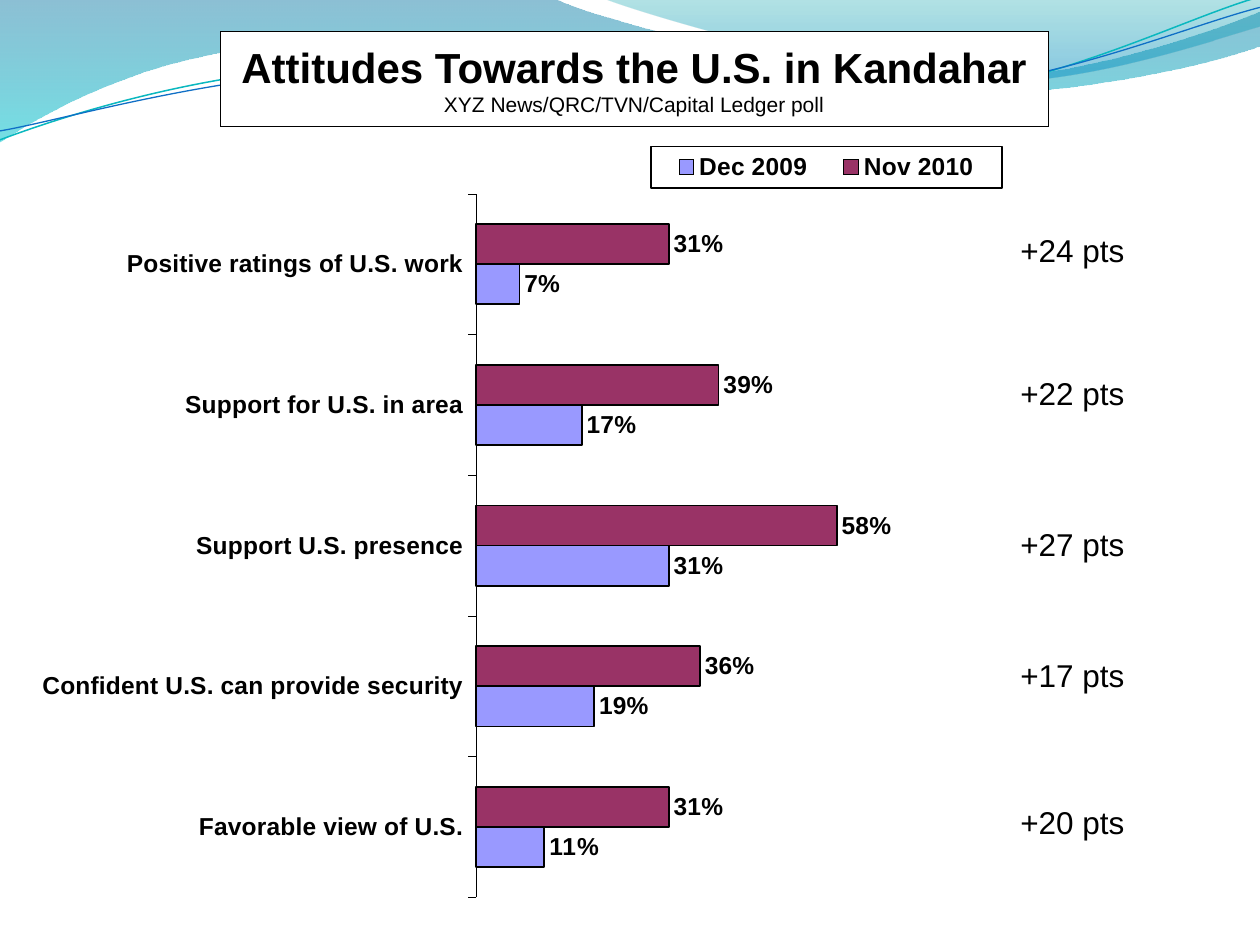
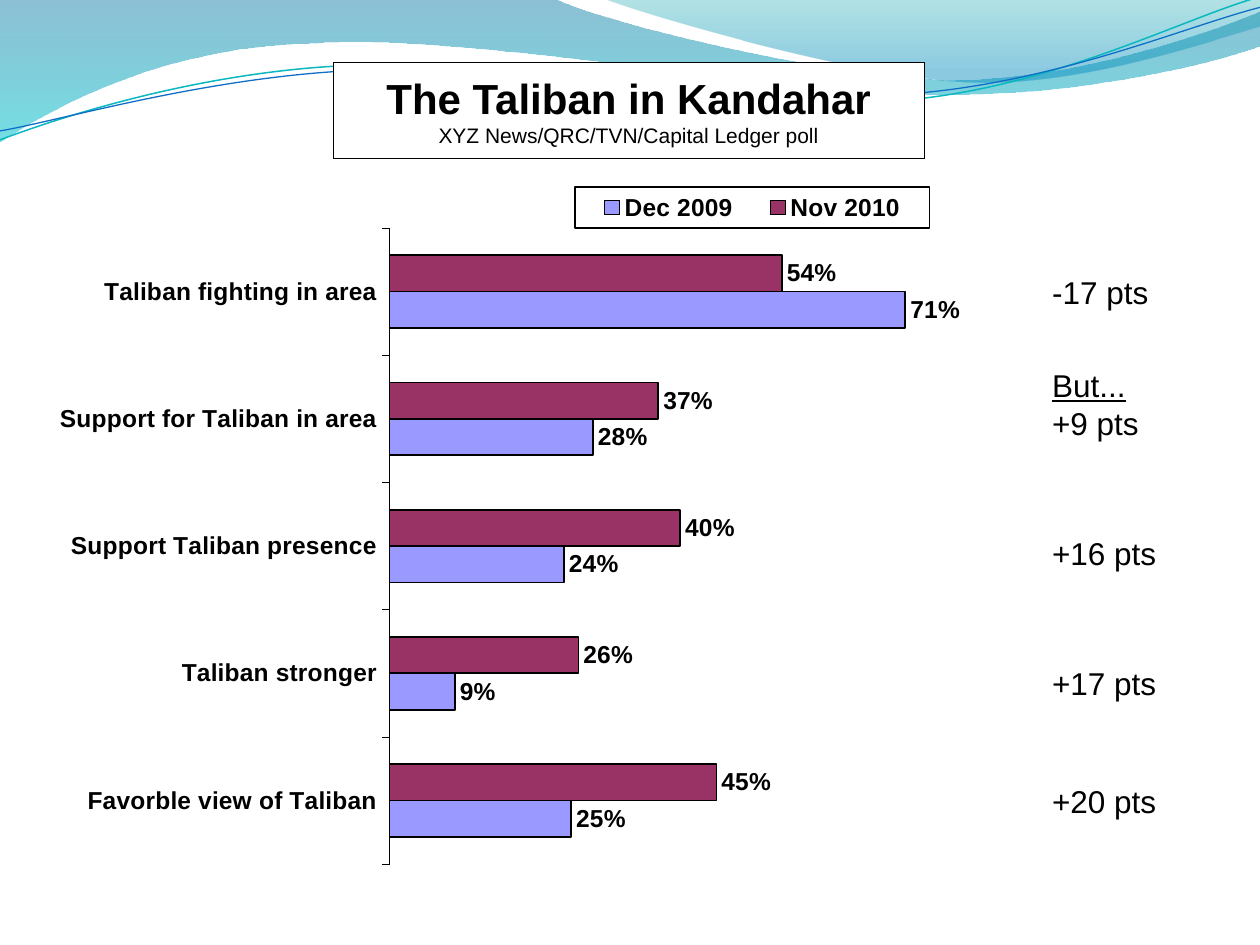
from lxml.etree import SubElement as Sub
from pptx import Presentation as Deck
from pptx.chart.data import CategoryChartData as Data
from pptx.dml.color import RGBColor as Color
from pptx.enum.chart import XL_CHART_TYPE as Kind
from pptx.enum.chart import XL_LABEL_POSITION as Spot
from pptx.enum.chart import XL_LEGEND_POSITION as Side
from pptx.enum.chart import XL_TICK_MARK as Tick
from pptx.enum.text import MSO_ANCHOR as Anchor
from pptx.enum.text import MSO_AUTO_SIZE as Fit
from pptx.enum.text import PP_ALIGN as Align
from pptx.oxml import parse_xml
from pptx.oxml.ns import nsdecls, qn
from pptx.util import Cm, Pt

BLACK = Color(0, 0, 0)
WHITE = Color(255, 255, 255)
PLUM = Color(0x99, 0x33, 0x66)
LILAC = Color(0x99, 0x99, 0xFF)
SEA = Color(0x00, 0x74, 0xA1)
AQUA = Color(0x00, 0xC6, 0xCF)
TEAL = Color(0x00, 0xA1, 0xA9)
SKY = Color(0x00, 0x8B, 0xBF)
GREEN = Color(0x0A, 0xB8, 0xBF)
BLUE = Color(0x0F, 0x6F, 0xC6)
FONT = "Arial"
POLL = "XYZ News/QRC/TVN/Capital Ledger poll"

BAND = [(0, 0), (11.18, -0.03), (12.09, 0.43, 16.87, 1.6, 19.25, 1.6),
        (21.67, 1.6, 24.33, 0.66, 25.4, 0.23), (25.43, 0.91),
        (24.97, 1.12, 22.1, 1.93, 18.95, 1.9),
        (15.8, 1.9, 9.7, 0.71, 6.53, 0.86),
        (3.28, 0.91, 1.17, 2.11, -0.03, 2.87)]
CREST = [(12.17, -0.03), (12.93, 0.28, 17.32, 1.57, 19.53, 1.65),
         (21.74, 1.75, 24.41, 0.81, 25.4, 0.53), (25.4, 0)]
UPPER = [(0, 2.82), (1.22, 2.36, 4.01, 1.45, 7.04, 1.32),
         (10.03, 1.19, 15.06, 2.26, 18.11, 2.03),
         (21.16, 1.8, 23.83, 0.38, 25.35, -0.05)]
LOWER = [(0, 2.64), (1.19, 2.44, 4.17, 1.55, 7.19, 1.42),
         (10.24, 1.3, 15.16, 2.13, 18.21, 1.9),
         (21.23, 1.7, 23.9, 0.53, 25.4, 0.15)]


def style(font, size, bold=False):
    font.name, font.size, font.bold = FONT, Pt(size), bold
    font.color.rgb = BLACK


def put(para, text, size=18, bold=False, under=False, gap=0, align=Align.LEFT):
    run = para.add_run()
    run.text = text
    style(run.font, size, bold)
    run.font.underline = under
    para.alignment = align
    para.space_before = Pt(gap)


def bend(shape, steps):
    lines = iter(list(shape.element.iter(qn("a:lnTo"))))
    for step in steps[1:]:
        group = [next(lines) for _ in step[::2]]
        if len(group) == 3:
            curve = parse_xml(f"<a:cubicBezTo {nsdecls('a')}/>")
            group[0].addprevious(curve)
            for line in group:
                curve.append(line[0])
                line.getparent().remove(line)


def place(node, index, box, inner=False):
    for old in node.findall(qn("c:layout")):
        node.remove(old)
    layout = parse_xml(f"<c:layout {nsdecls('c')}/>")
    manual = Sub(layout, qn("c:manualLayout"))
    if inner:
        Sub(manual, qn("c:layoutTarget")).set("val", "inner")
    for tag in ("xMode", "yMode"):
        Sub(manual, qn("c:" + tag)).set("val", "edge")
    for tag, value in zip("xywh", box):
        Sub(manual, qn("c:" + tag)).set("val", str(value))
    node.insert(index, layout)


def frame(node, inside):
    props = parse_xml(f"<c:spPr {nsdecls('c', 'a')}>{inside}</c:spPr>")
    node.find(qn("c:txPr")).addprevious(props)


class Page:
    def __init__(self, deck):
        self.deck = deck
        self.slide = None

    def start(self):
        self.slide = self.deck.slides.add_slide(self.deck.slide_layouts[5])

    def shape(self, steps, close):
        points = [(Cm(x), Cm(y)) for step in steps
                  for x, y in zip(step[::2], step[1::2])]
        build = self.slide.shapes.build_freeform(*points[0])
        build.add_line_segments(points[1:], close=close)
        shape = build.convert_to_shape()
        bend(shape, steps)
        shape.shadow.inherit = False
        tree = self.deck.slide_master.element.cSld.spTree
        shape.element.nvSpPr.cNvPr.id = 100 + len(tree)
        tree.append(shape.element)
        return shape

    def wave(self, steps, *stops):
        shape = self.shape(steps, True)
        shape.line.fill.background()
        shape.fill.gradient()
        shape.fill.gradient_angle = 270
        for stop, (color, spot, _) in zip(shape.fill.gradient_stops, stops):
            stop.color.rgb, stop.position = color, spot
        tints = shape.element.spPr.iter(qn("a:srgbClr"))
        for tint, (_, _, alpha) in zip(tints, stops):
            Sub(tint, qn("a:alpha")).set("val", str(alpha * 1000))

    def curve(self, steps, color, width):
        shape = self.shape(steps, False)
        shape.fill.background()
        shape.line.color.rgb, shape.line.width = color, Pt(width)

    def title(self, text, left, top, width):
        box = self.slide.shapes.title
        box.left, box.top, box.width, box.height = map(Cm, (left, top, width, 1.93))
        box.fill.solid()
        box.fill.fore_color.rgb = WHITE
        box.line.color.rgb, box.line.width = BLACK, Pt(0)
        body = box.text_frame
        body.auto_size, body.vertical_anchor = Fit.NONE, Anchor.MIDDLE
        body.margin_left = body.margin_right = Cm(0.15)
        body.margin_top = body.margin_bottom = Cm(0.1)
        put(body.paragraphs[0], text, size=24, bold=True, align=Align.CENTER)
        put(body.add_paragraph(), POLL, size=12, align=Align.CENTER)

    def notes(self, left, top, rows):
        box = self.slide.shapes.add_textbox(*map(Cm, (left, top, 3.3, 11.76)))
        body = box.text_frame
        body.word_wrap = True
        for i, (text, gap) in enumerate(rows):
            para = body.add_paragraph() if i else body.paragraphs[0]
            put(para, text, gap=gap, under=text == "But...")

    def chart(self, box, names, now, then, inner, key):
        data = Data(number_format="0%")
        data.categories = names
        data.add_series("Nov 2010", [n / 100 for n in now])
        data.add_series("Dec 2009", [n / 100 for n in then])
        chart = self.slide.shapes.add_chart(
            Kind.BAR_CLUSTERED, *map(Cm, box), data).chart
        chart.has_title = False
        style(chart.font, 10)
        frame(chart.element, "<a:noFill/><a:ln><a:noFill/></a:ln>")

        axis = chart.category_axis
        axis.reverse_order = True
        axis.major_tick_mark, axis.minor_tick_mark = Tick.OUTSIDE, Tick.NONE
        axis.has_major_gridlines = False
        axis.format.line.color.rgb, axis.format.line.width = BLACK, Pt(0.25)
        style(axis.tick_labels.font, 14, True)
        scale = chart.value_axis
        scale.minimum_scale, scale.maximum_scale, scale.major_unit = 0, 1.1, 0.1
        scale.has_major_gridlines = scale.visible = False

        plot = chart.plots[0]
        plot.gap_width, plot.overlap, plot.vary_by_categories = 150, 0, False
        for bars, color in zip(plot.series, (PLUM, LILAC)):
            bars.format.fill.solid()
            bars.format.fill.fore_color.rgb = color
            bars.format.line.color.rgb, bars.format.line.width = BLACK, Pt(1)
            labels = bars.data_labels
            labels.show_value, labels.position = True, Spot.OUTSIDE_END
            labels.number_format, labels.number_format_is_linked = "0%", False
            style(labels.font, 14, True)
        place(chart.element.find(".//" + qn("c:plotArea")), 0, inner, True)

        chart.has_legend = True
        chart.legend.position = Side.RIGHT
        chart.legend.include_in_layout = False
        style(chart.legend.font, 14, True)
        node = chart.element.find(".//" + qn("c:legend"))
        place(node, 1, key)
        frame(node, f'<a:solidFill><a:srgbClr val="{WHITE}"/></a:solidFill>'
                    f'<a:ln w="{Pt(1)}"><a:solidFill><a:srgbClr val="{BLACK}"/>'
                    '</a:solidFill></a:ln>')


def main():
    deck = Deck()
    deck.slide_width, deck.slide_height = Cm(25.4), Cm(19.05)
    page = Page(deck)

    page.start()
    page.wave(BAND, (SEA, 0, 45), (AQUA, 1, 55))
    page.wave(CREST, (TEAL, 0, 30), (SKY, 0.8, 45))
    page.curve(UPPER, GREEN, 0.85)
    page.curve(LOWER, BLUE, 0.75)
    page.chart((0.42, 2.32, 23.83, 16.21),
               ["Positive ratings of U.S. work", "Support for U.S. in area",
                "Support U.S. presence", "Confident U.S. can provide security",
                "Favorable view of U.S."],
               (31, 39, 58, 36, 31), (7, 17, 31, 19, 11),
               (0.385, 0.098, 0.579, 0.875), (0.533, 0.039, 0.297, 0.052))
    page.title("Attitudes Towards the U.S. in Kandahar", 4.44, 0.63, 16.69)
    page.notes(20.32, 4.53, [("+24 pts", 0), ("+22 pts", 60.4), ("+27 pts", 64.4),
                             ("+17 pts", 53.4), ("+20 pts", 62.4)])

    page.start()
    page.notes(20.96, 5.38, [("-17 pts", 0), ("But...", 31.4), ("+9 pts", 0),
                             ("+16 pts", 52.8), ("+17 pts", 53), ("+20 pts", 45.4)])
    page.title("The Taliban in Kandahar", 6.72, 1.26, 11.91)
    page.chart((0.85, 3.16, 23.98, 14.66),
               ["Taliban fighting in area", "Support for Taliban in area",
                "Support Taliban presence", "Taliban stronger",
                "Favorble view of Taliban"],
               (54, 37, 40, 26, 45), (71, 28, 24, 9, 25),
               (0.292, 0.098, 0.672, 0.875), (0.448, 0.042, 0.298, 0.056))
    deck.save("out.pptx")


if __name__ == "__main__":
    main()
